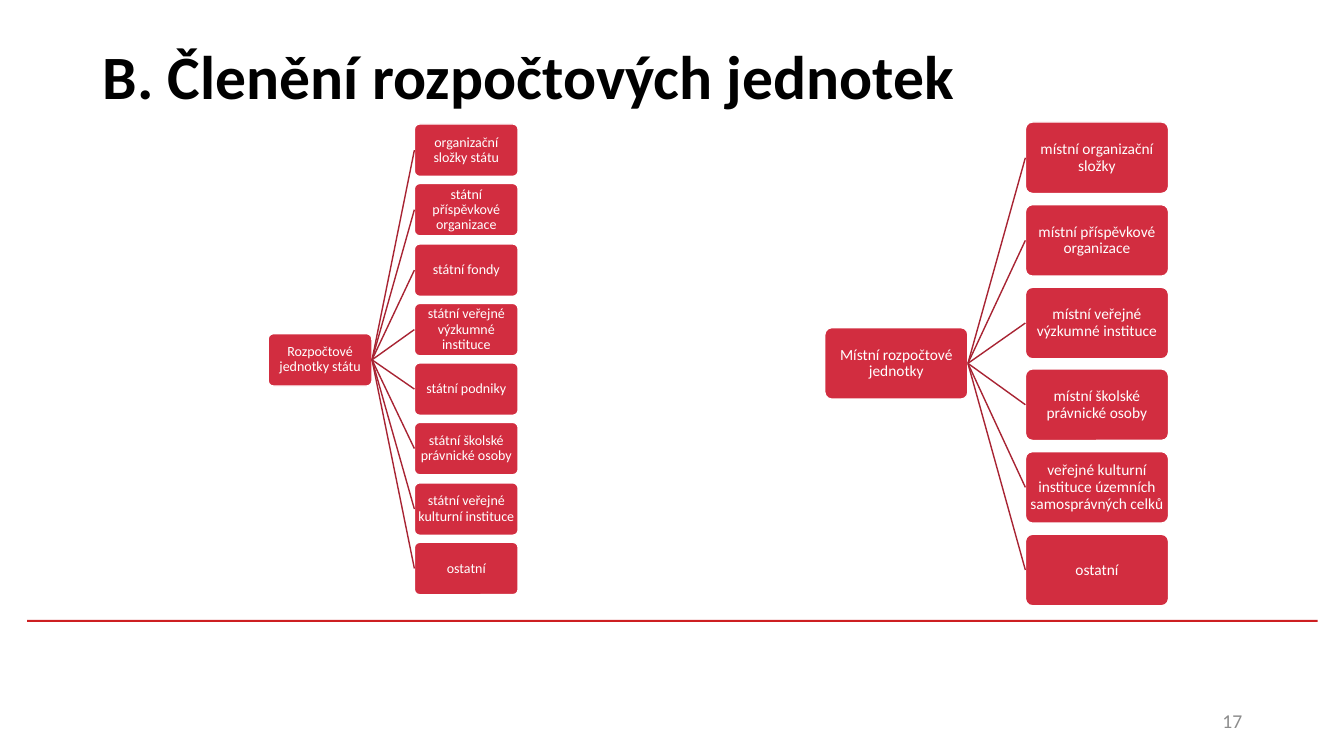
from pptx import Presentation
from pptx.dml.color import RGBColor
from pptx.enum.shapes import MSO_CONNECTOR, MSO_SHAPE
from pptx.enum.text import MSO_ANCHOR, PP_ALIGN
from pptx.oxml.ns import qn
from pptx.util import Pt
from lxml.etree import SubElement

SCALE = 9144  # EMU per px, 100 px to the inch
BLACK = RGBColor(0x00, 0x00, 0x00)
WHITE = RGBColor(0xFF, 0xFF, 0xFF)
GRAY = RGBColor(0x8C, 0x8C, 0x8C)
RED = RGBColor(0xD2, 0x2D, 0x40)
DARK = RGBColor(0xA8, 0x24, 0x33)
RULE = RGBColor(0xCD, 0x1F, 0x21)

STATE = [
    "organizační složky státu",
    "státní příspěvkové organizace",
    "státní fondy",
    "státní veřejné výzkumné instituce",
    "státní podniky",
    "státní školské právnické osoby",
    "státní veřejné kulturní instituce",
    "ostatní",
]
LOCAL = [
    "místní organizační složky",
    "místní příspěvkové organizace",
    "místní veřejné výzkumné instituce",
    "místní školské právnické osoby",
    "veřejné kulturní instituce územních samosprávných celků",
    "ostatní",
]


def px(*sizes):
    return [size * SCALE for size in sizes]


class Page:
    font = "Calibri"

    def __init__(self, deck):
        self.shapes = deck.slides.add_slide(deck.slide_layouts[6]).shapes

    def fill_text(self, shape, text, size, color, align, bold=False):
        frame = shape.text_frame
        frame.word_wrap = True
        frame.vertical_anchor = MSO_ANCHOR.MIDDLE
        frame.text = text
        para = frame.paragraphs[0]
        para.alignment = align
        font = para.runs[0].font
        font.name, font.size, font.bold = self.font, Pt(size), bold
        font.color.rgb = color
        return para

    def label(self, area, text, size, color, align=PP_ALIGN.LEFT, bold=False):
        box = self.shapes.add_textbox(*px(*area))
        self.fill_text(box, text, size, color, align, bold)

    def block(self, kind, area, fill):
        shape = self.shapes.add_shape(kind, *px(*area))
        shape.shadow.inherit = False
        shape.fill.solid()
        shape.fill.fore_color.rgb = fill
        shape.line.fill.background()
        return shape

    def node(self, area, text, size):
        shape = self.block(MSO_SHAPE.ROUNDED_RECTANGLE, area, RED)
        shape.adjustments[0] = 0.1
        shape.line.color.rgb = WHITE
        shape.line.width = Pt(1)
        frame = shape.text_frame
        frame.margin_left = frame.margin_right = SCALE
        frame.margin_top = frame.margin_bottom = SCALE
        para = self.fill_text(shape, text, size, WHITE, PP_ALIGN.CENTER)
        para.line_spacing = 0.9
        return shape

    def link(self, start, end):
        line = self.shapes.add_connector(MSO_CONNECTOR.STRAIGHT, 0, 0, 0, 0)
        line.begin_connect(start, 3)
        line.end_connect(end, 1)
        line.line.color.rgb = DARK
        line.line.width = Pt(1)
        SubElement(line._element.spPr, qn("a:effectLst"))

    def tree(self, name, items, lefts, top, box, pitch, size):
        """Root box centred beside an evenly spaced column of items."""
        wide, high = box
        mid = top + round((len(items) - 1) * pitch / 2)
        root = self.node((lefts[0], mid, wide, high), name, size)
        for i, item in enumerate(items):
            area = (lefts[1], top + round(i * pitch), wide, high)
            self.link(root, self.node(area, item, size))


def main():
    deck = Presentation()
    deck.slide_width, deck.slide_height = px(1333, 750)
    page = Page(deck)

    # Rule, title and page number
    page.block(MSO_SHAPE.RECTANGLE, (27, 615, 1280, 2), RULE)
    page.label((92, 2, 1150, 145), "B. Členění rozpočtových jednotek",
               44, BLACK, bold=True)
    page.label((942, 695, 300, 40), "17", 14, GRAY, PP_ALIGN.RIGHT)

    # State and local budget units
    page.tree("Rozpočtové jednotky státu", STATE, (266, 411), 123,
              (103, 52), 59.3, 10)
    page.tree("Místní rozpočtové jednotky", LOCAL, (818, 1017), 121,
              (142, 71), 81.8, 11)

    deck.save("out.pptx")


if __name__ == "__main__":
    main()
